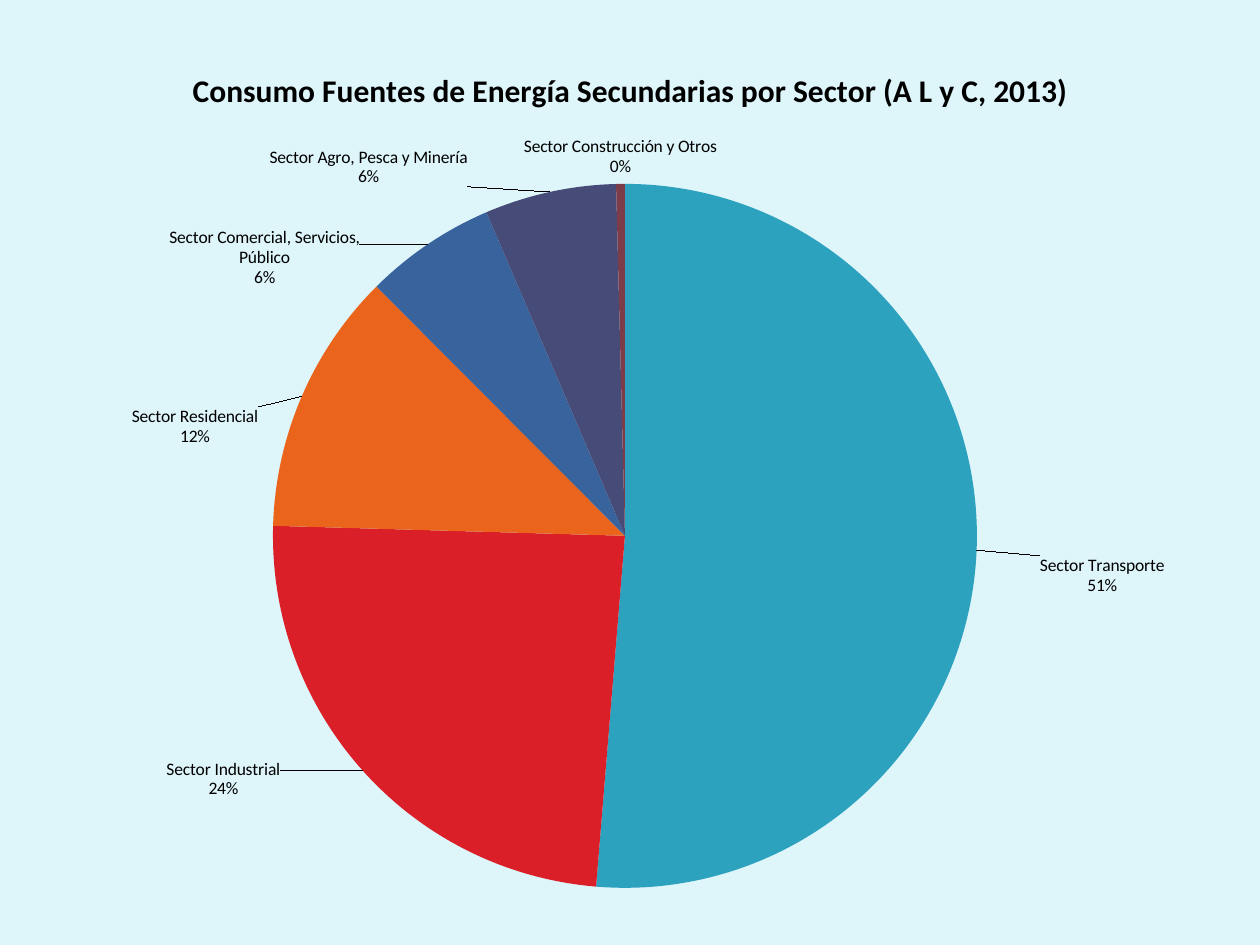
import copy
from dataclasses import dataclass

import pptx
import pptx.chart.data
import pptx.dml.color
import pptx.enum.chart
import pptx.oxml
import pptx.oxml.ns
import pptx.util

PX = pptx.util.Inches(1) // 126
RGB = pptx.dml.color.RGBColor
BACKGROUND = RGB(0xDE, 0xF5, 0xFA)
BLACK = RGB(0x00, 0x00, 0x00)
TEAL = RGB(0x2D, 0xA2, 0xBF)
RED = RGB(0xDA, 0x1F, 0x28)
ORANGE = RGB(0xEB, 0x64, 0x1B)
BLUE = RGB(0x39, 0x63, 0x9D)
INDIGO = RGB(0x47, 0x4B, 0x78)
MAROON = RGB(0x7D, 0x3C, 0x4A)

CHART_LEFT, CHART_TOP, CHART_WIDTH, CHART_HEIGHT = 34, 39, 1191, 867
PIE_LEFT, PIE_TOP, PIE_SIZE = 239, 145, 704
TITLE = "Consumo Fuentes de Energía Secundarias por Sector (A L y C, 2013)"
TITLE_LEFT, TITLE_TOP = 153, 24


@dataclass(frozen=True)
class Sector:
    name: str
    share: float
    color: RGB
    label_shift: tuple[int, int] | None = None


SECTORS = [
    Sector("Sector Transporte", 51, TEAL, (56, 25)),
    Sector("Sector Industrial", 24, RED, (-77, -16)),
    Sector("Sector Residencial", 12, ORANGE, (-37, 53)),
    Sector("Sector Comercial, Servicios, Público", 6, BLUE, (-64, 49)),
    Sector("Sector Agro, Pesca y Minería", 6, INDIGO, (-81, 2)),
    Sector("Sector Construcción y Otros", 0.4, MAROON),
]


def chart_xml(tag: str, content: str):
    namespace = pptx.oxml.ns.nsdecls("c")
    return pptx.oxml.parse_xml(f"<c:{tag} {namespace}>{content}</c:{tag}>")


def manual_layout(x: int, y: int, size: int = 0, edge: bool = False):
    parts = ""
    if size:
        parts += '<c:layoutTarget val="inner"/>'
    if edge:
        parts += '<c:xMode val="edge"/><c:yMode val="edge"/>'
    parts += f'<c:x val="{x / CHART_WIDTH:.4f}"/><c:y val="{y / CHART_HEIGHT:.4f}"/>'
    if size:
        parts += f'<c:w val="{size / CHART_WIDTH:.4f}"/><c:h val="{size / CHART_HEIGHT:.4f}"/>'
    return chart_xml("layout", f"<c:manualLayout>{parts}</c:manualLayout>")


def replace_layout(parent, layout, index: int) -> None:
    for old in parent.findall(pptx.oxml.ns.qn("c:layout")):
        parent.remove(old)
    parent.insert(index, layout)


def add_title(chart) -> None:
    chart.has_title = True
    heading = chart.chart_title.text_frame.paragraphs[0]
    heading.text = TITLE
    heading.font.name = "Calibri"
    heading.font.size = pptx.util.Pt(18)
    heading.font.bold = True
    heading.font.color.rgb = BLACK
    layout = manual_layout(TITLE_LEFT, TITLE_TOP, edge=True)
    replace_layout(chart.chart_title._element, layout, 1)


def label_sectors(series) -> None:
    labels = series.data_labels
    labels.number_format = "0%"
    labels.number_format_is_linked = False
    labels.position = pptx.enum.chart.XL_LABEL_POSITION.OUTSIDE_END
    labels.show_value = False
    labels.show_category_name = True
    labels.show_percentage = True
    label_list = labels._element
    bubble_size = label_list.find(pptx.oxml.ns.qn("c:showBubbleSize"))
    bubble_size.addnext(chart_xml("separator", "\n"))

    leader_lines = pptx.oxml.ns.qn("c:showLeaderLines")
    settings = [part for part in label_list if part.tag != leader_lines]
    moved = [(i, s.label_shift) for i, s in enumerate(SECTORS) if s.label_shift]
    for position, (index, shift) in enumerate(moved):
        label = chart_xml("dLbl", f'<c:idx val="{index}"/>')
        label.append(manual_layout(*shift))
        label.extend(copy.deepcopy(settings))
        label_list.insert(position, label)


def add_sector_pie(slide) -> None:
    consumption = pptx.chart.data.CategoryChartData()
    consumption.categories = [sector.name for sector in SECTORS]
    consumption.add_series("Series 1", [sector.share for sector in SECTORS])
    chart = slide.shapes.add_chart(
        pptx.enum.chart.XL_CHART_TYPE.PIE,
        CHART_LEFT * PX, CHART_TOP * PX, CHART_WIDTH * PX, CHART_HEIGHT * PX,
        consumption,
    ).chart
    chart.has_legend = False
    chart.font.name = "Calibri"
    chart.font.size = pptx.util.Pt(10)
    chart.font.color.rgb = BLACK
    add_title(chart)

    plot = chart.plots[0]
    plot.vary_by_categories = True
    plot_area = plot._element.getparent()
    replace_layout(plot_area, manual_layout(PIE_LEFT, PIE_TOP, PIE_SIZE, True), 0)
    series = plot.series[0]
    for index, sector in enumerate(SECTORS):
        slice_format = series.points[index].format
        slice_format.fill.solid()
        slice_format.fill.fore_color.rgb = sector.color
        slice_format.line.fill.background()
    label_sectors(series)


def main() -> None:
    presentation = pptx.Presentation()
    presentation.slide_width = 1260 * PX
    presentation.slide_height = 945 * PX
    slide = presentation.slides.add_slide(presentation.slide_layouts[6])
    slide.background.fill.solid()
    slide.background.fill.fore_color.rgb = BACKGROUND
    add_sector_pie(slide)
    presentation.save("out.pptx")


if __name__ == "__main__":
    main()
